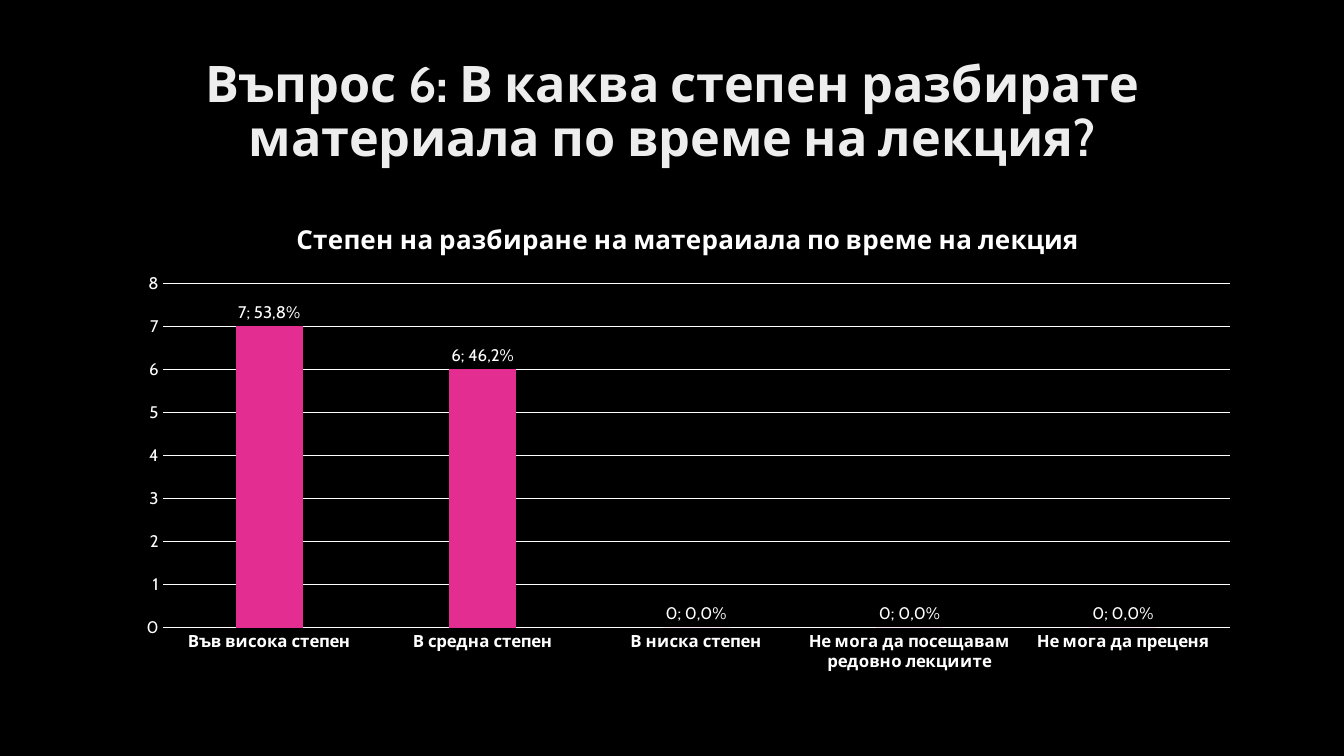
from dataclasses import dataclass

from pptx import Presentation
from pptx.chart.data import CategoryChartData
from pptx.dml.color import RGBColor
from pptx.enum.chart import XL_CHART_TYPE, XL_LABEL_POSITION, XL_TICK_MARK
from pptx.enum.text import MSO_ANCHOR, PP_ALIGN
from pptx.util import Inches, Pt


@dataclass(frozen=True)
class Theme:
    font: str = "Cabin"
    background: RGBColor = RGBColor(0x00, 0x00, 0x00)
    heading: RGBColor = RGBColor(0xED, 0xED, 0xED)
    text: RGBColor = RGBColor(0xFF, 0xFF, 0xFF)
    column: RGBColor = RGBColor(0xE3, 0x2D, 0x91)
    heading_size: Pt = Pt(36)
    chart_title_size: Pt = Pt(18.6)
    label_size: Pt = Pt(12)
    line_width: Pt = Pt(0.75)


theme = Theme()


def style_font(font, size, color, bold=False):
    font.name = theme.font
    font.size = size
    font.bold = bold
    font.color.rgb = color


def style_line(line):
    line.color.rgb = theme.text
    line.width = theme.line_width


chart_title = "Степен на разбиране на матераиала по време на лекция"
answers = [
    ("Във висока степен", 7, "7; 53,8%"),
    ("В средна степен", 6, "6; 46,2%"),
    ("В ниска степен", 0, "0; 0,0%"),
    ("Не мога да посещавам редовно лекциите", 0, "0; 0,0%"),
    ("Не мога да преценя", 0, "0; 0,0%"),
]

deck = Presentation()
deck.slide_width = Inches(13.33)
deck.slide_height = Inches(7.5)
page = deck.slides.add_slide(deck.slide_layouts[6])
page.background.fill.solid()
page.background.fill.fore_color.rgb = theme.background

heading_box = page.shapes.add_textbox(Inches(0.92), Inches(0.4), Inches(11.5), Inches(1.45))
heading_frame = heading_box.text_frame
heading_frame.word_wrap = True
heading_frame.vertical_anchor = MSO_ANCHOR.MIDDLE
para = heading_frame.paragraphs[0]
para.alignment = PP_ALIGN.CENTER
para.line_spacing = 0.9
span = para.add_run()
span.text = "Въпрос 6: В каква степен разбирате материала по време на лекция?"
style_font(span.font, theme.heading_size, theme.heading, bold=True)

data = CategoryChartData()
data.categories = [answer for answer, count, label in answers]
data.add_series(chart_title, [count for answer, count, label in answers])
chart = page.shapes.add_chart(
    XL_CHART_TYPE.COLUMN_CLUSTERED,
    Inches(1.23), Inches(2), Inches(11.19), Inches(4.76), data,
).chart
style_font(chart.font, theme.label_size, theme.text)
chart.has_legend = False
chart.has_title = True
chart.chart_title.include_in_layout = False
span = chart.chart_title.text_frame.paragraphs[0].add_run()
span.text = chart_title
style_font(span.font, theme.chart_title_size, theme.text, bold=True)

for axis, bold in ((chart.category_axis, True), (chart.value_axis, False)):
    axis.major_tick_mark = XL_TICK_MARK.NONE
    axis.minor_tick_mark = XL_TICK_MARK.NONE
    style_font(axis.tick_labels.font, theme.label_size, theme.text, bold)
style_line(chart.category_axis.format.line)
chart.value_axis.format.line.fill.background()
chart.value_axis.minimum_scale = 0
chart.value_axis.maximum_scale = 8
chart.value_axis.major_unit = 1
chart.value_axis.has_major_gridlines = True
style_line(chart.value_axis.major_gridlines.format.line)

plot = chart.plots[0]
plot.gap_width = 219
plot.overlap = -27
plot.vary_by_categories = False
series = plot.series[0]
series.format.fill.solid()
series.format.fill.fore_color.rgb = theme.column

series.data_labels.show_value = True
series.data_labels.position = XL_LABEL_POSITION.OUTSIDE_END
style_font(series.data_labels.font, theme.label_size, theme.text)
for index, (answer, count, label) in enumerate(answers):
    data_label = series.points[index].data_label
    span = data_label.text_frame.paragraphs[0].add_run()
    span.text = label
    style_font(span.font, theme.label_size, theme.text)
    data_label.position = XL_LABEL_POSITION.OUTSIDE_END

deck.save("out.pptx")
